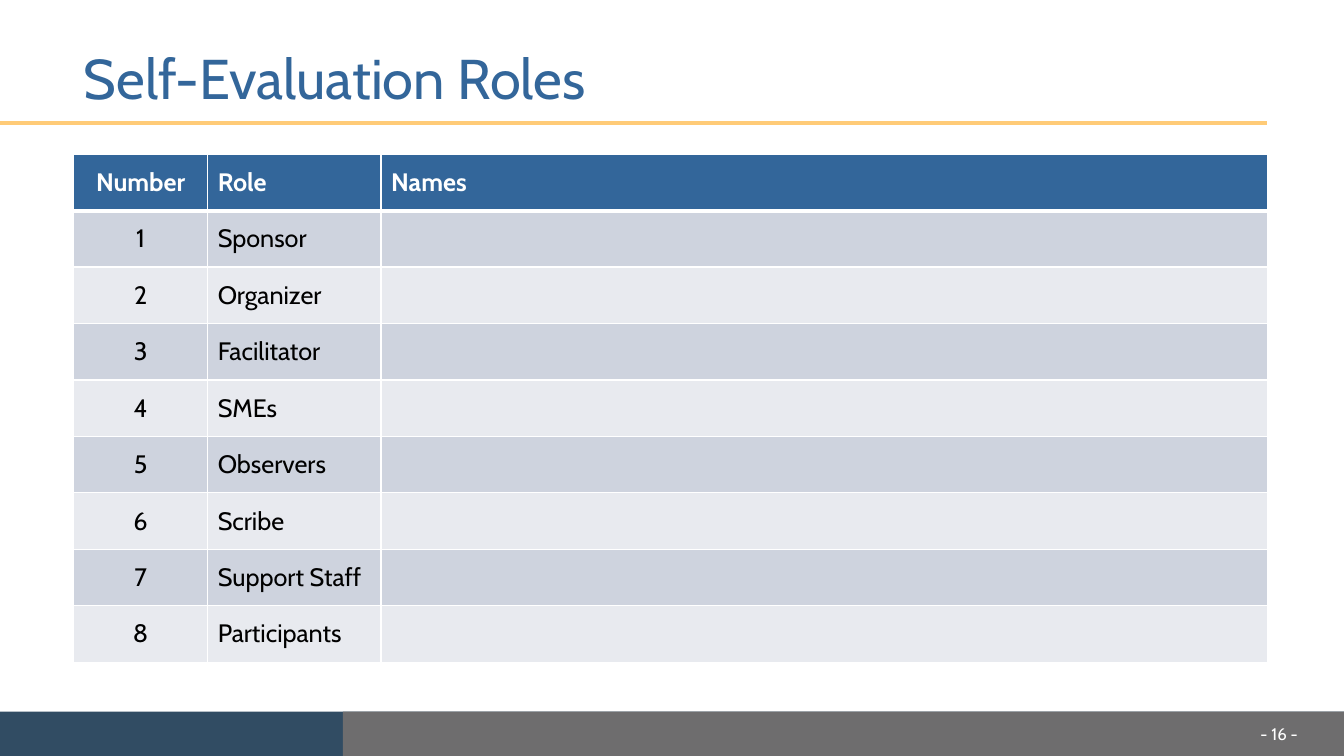
from typing import NamedTuple

from lxml.etree import SubElement
from pptx import Presentation
from pptx.dml.color import RGBColor
from pptx.enum.shapes import MSO_CONNECTOR, MSO_SHAPE
from pptx.enum.text import MSO_ANCHOR, MSO_AUTO_SIZE, PP_ALIGN
from pptx.oxml.ns import qn
from pptx.slide import Slide
from pptx.table import _Cell
from pptx.text.text import TextFrame
from pptx.util import Inches, Pt

FONT = "Cabin"
WHITE = RGBColor(0xFF, 0xFF, 0xFF)
BLACK = RGBColor(0x00, 0x00, 0x00)
BLUE = RGBColor(0x33, 0x66, 0x9A)
NAVY = RGBColor(0x31, 0x4C, 0x63)
GRAY = RGBColor(0x6E, 0x6D, 0x6E)
GOLD = RGBColor(0xFF, 0xCB, 0x77)
BANDS = (RGBColor(0xCE, 0xD3, 0xDE), RGBColor(0xE8, 0xEA, 0xEF))

LEFT, WIDTH = 0.73, 11.84
ROW_TALL = 0.56
ROLES = ("Sponsor", "Organizer", "Facilitator", "SMEs",
         "Observers", "Scribe", "Support Staff", "Participants")


class Bar(NamedTuple):
    left: float
    width: float
    color: RGBColor


class Column(NamedTuple):
    head: str
    width: float
    align: PP_ALIGN


BARS = (Bar(0, 13.33, NAVY), Bar(3.4, 9.93, GRAY))
COLUMNS = (Column("Number", 1.33, PP_ALIGN.CENTER),
           Column("Role", 1.72, PP_ALIGN.LEFT),
           Column("Names", 8.79, PP_ALIGN.LEFT))


def write(frame: TextFrame, text: str, *, size: float, color: RGBColor,
          bold: bool = False, align: PP_ALIGN = PP_ALIGN.LEFT,
          spacing: float = 1.0) -> None:
    frame.word_wrap = True
    frame.vertical_anchor = MSO_ANCHOR.MIDDLE
    para = frame.paragraphs[0]
    para.alignment, para.line_spacing = align, spacing
    run = para.add_run()
    run.text = text
    font = run.font
    font.name, font.size, font.bold = FONT, Pt(size), bold
    font.color.rgb = color


def draw_bar(slide: Slide, bar: Bar) -> None:
    shape = slide.shapes.add_shape(
        MSO_SHAPE.RECTANGLE, Inches(bar.left), Inches(7.06),
        Inches(bar.width), Inches(0.44))
    shape.shadow.inherit = False
    shape.fill.solid()
    shape.fill.fore_color.rgb = bar.color
    shape.line.fill.background()


def draw_rule(slide: Slide) -> None:
    rule = slide.shapes.add_connector(
        MSO_CONNECTOR.STRAIGHT, 0, Inches(1.22), Inches(12.57), Inches(1.22))
    rule.line.color.rgb = GOLD
    rule.line.width = Pt(3)
    SubElement(rule._element.spPr, qn("a:effectLst"))


def style_cell(cell: _Cell, fill: RGBColor, top: float, base: float) -> None:
    props = cell._tc.get_or_add_tcPr()
    for side, width in (("L", 1), ("R", 1), ("T", top), ("B", base)):
        edge = SubElement(props, qn(f"a:ln{side}"), w=str(Pt(width)))
        solid = SubElement(edge, qn("a:solidFill"))
        SubElement(solid, qn("a:srgbClr"), val=str(WHITE))
    cell.fill.solid()
    cell.fill.fore_color.rgb = fill
    cell.vertical_anchor = MSO_ANCHOR.MIDDLE


def draw_table(slide: Slide) -> None:
    rows = [[col.head for col in COLUMNS]]
    rows += [[str(num), role, ""] for num, role in enumerate(ROLES, 1)]
    table = slide.shapes.add_table(
        len(rows), len(COLUMNS), Inches(LEFT), Inches(1.53),
        Inches(WIDTH), Inches(ROW_TALL * len(rows))).table
    for col, grid in zip(COLUMNS, table.columns):
        grid.width = Inches(col.width)
    for r, row in enumerate(rows):
        table.rows[r].height = Inches(ROW_TALL)
        head = r == 0
        for c, text in enumerate(row):
            cell = table.cell(r, c)
            style_cell(cell, BLUE if head else BANDS[(r - 1) % 2],
                       top=3 if r == 1 else 1, base=3 if head else 1)
            if text:
                write(cell.text_frame, text, size=18, bold=head,
                      color=WHITE if head else BLACK, align=COLUMNS[c].align)


def main() -> None:
    deck = Presentation()
    deck.slide_width, deck.slide_height = Inches(13.33), Inches(7.5)
    slide = deck.slides.add_slide(deck.slide_layouts[5])

    # Footer bars and title rule
    for bar in BARS:
        draw_bar(slide, bar)
    draw_rule(slide)

    # Title
    title = slide.shapes.title
    title.left, title.top = Inches(LEFT), Inches(0.44)
    title.width, title.height = Inches(WIDTH), Inches(0.74)
    title.text_frame.auto_size = MSO_AUTO_SIZE.NONE
    write(title.text_frame, "Self-Evaluation Roles", size=40, color=BLUE,
          spacing=0.9)

    # Roles
    draw_table(slide)

    # Page number
    page = slide.shapes.add_textbox(
        Inches(11.57), Inches(7.08), Inches(1.4), Inches(0.4))
    write(page.text_frame, "- 16 -", size=12, color=WHITE,
          align=PP_ALIGN.RIGHT)

    deck.save("out.pptx")


if __name__ == "__main__":
    main()
